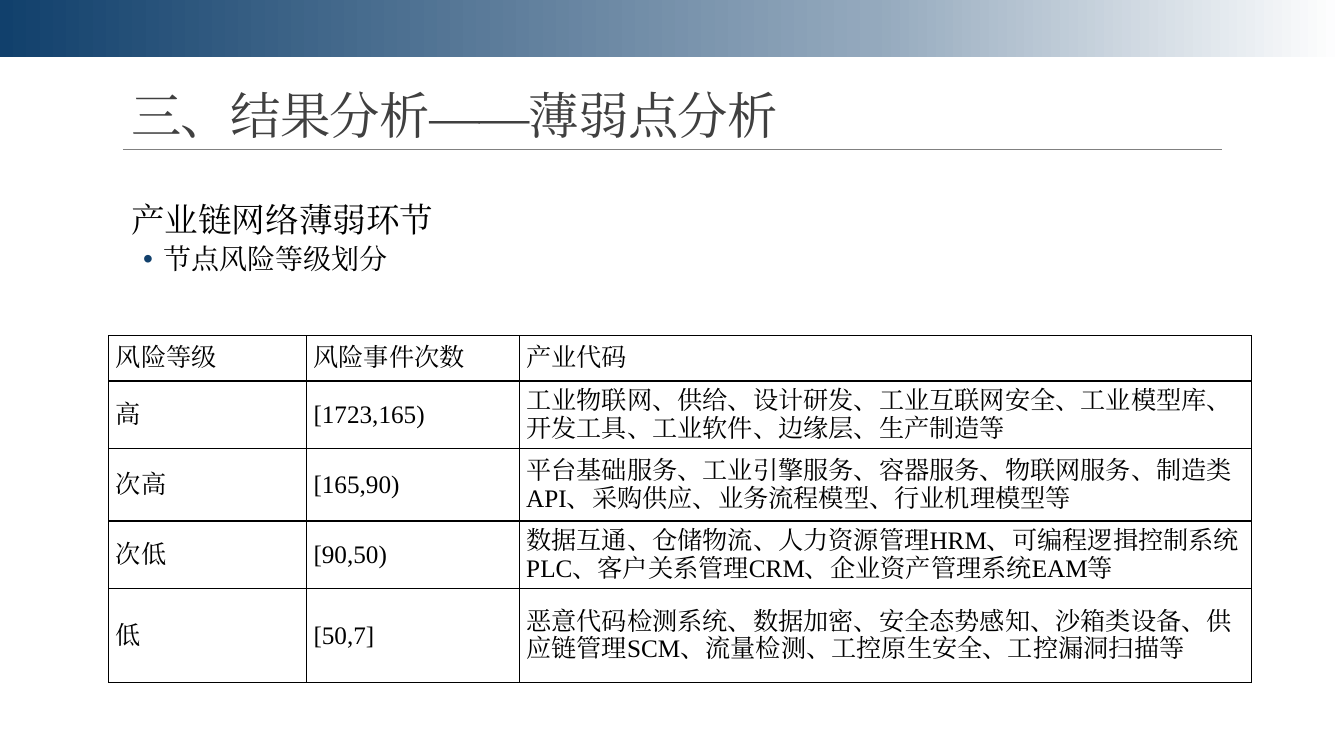
import copy
from dataclasses import dataclass

import pptx
import pptx.dml.color
import pptx.enum.shapes
import pptx.enum.text
import pptx.oxml
import pptx.oxml.ns
import pptx.util

PX = 9144
FONT = "Times New Roman"
BLACK = "000000"
NAVY = "11406C"
NS = pptx.oxml.ns.nsdecls("a")
qn = pptx.oxml.ns.qn


@dataclass(frozen=True)
class Box:
    left: int
    top: int
    width: int
    height: int

    def emu(self) -> list[int]:
        return [px(v) for v in (self.left, self.top, self.width, self.height)]


@dataclass(frozen=True)
class RiskRow:
    height: int
    level: str
    events: str
    industries: str


RISK_ROWS = [
    RiskRow(45, "风险等级", "风险事件次数", "产业代码"),
    RiskRow(67, "高", "[1723,165)",
            "工业物联网、供给、设计研发、工业互联网安全、工业模型库、开发工具、工业软件、边缘层、生产制造等"),
    RiskRow(72, "次高", "[165,90)",
            "平台基础服务、工业引擎服务、容器服务、物联网服务、制造类API、采购供应、业务流程模型、行业机理模型等"),
    RiskRow(67, "次低", "[90,50)",
            "数据互通、仓储物流、人力资源管理HRM、可编程逻揖控制系统PLC、客户关系管理CRM、企业资产管理系统EAM等"),
    RiskRow(93, "低", "[50,7]",
            "恶意代码检测系统、数据加密、安全态势感知、沙箱类设备、供应链管理SCM、流量检测、工控原生安全、工控漏洞扫描等"),
]
COLUMN_WIDTHS = [196, 211, 726]


def px(value: int) -> int:
    return value * PX


def rgb(value: str) -> pptx.dml.color.RGBColor:
    return pptx.dml.color.RGBColor.from_string(value)


def write(paragraph, text: str, *, size: int, color: str = BLACK, line: float = 1.0,
          before: int = 0, after: int = 0, level: int = 0, margin: int = 0,
          hanging: int = 0, bullet: str = "", tracking: int = 0) -> None:
    paragraph.alignment = pptx.enum.text.PP_ALIGN.LEFT
    paragraph.level = level
    paragraph.line_spacing = line
    paragraph.space_before = pptx.util.Pt(before)
    paragraph.space_after = pptx.util.Pt(after)
    properties = paragraph._p.get_or_add_pPr()
    properties.set("marL", str(px(margin)))
    properties.set("indent", str(-px(hanging)))
    if bullet:
        marks = [f'<a:buClr {NS}><a:srgbClr val="{NAVY}"/></a:buClr>',
                 f'<a:buFont {NS} typeface="Arial"/>',
                 f'<a:buChar {NS} char="{bullet}"/>']
    else:
        marks = [f"<a:buNone {NS}/>"]
    for mark in marks:
        properties.append(pptx.oxml.parse_xml(mark))
    run = paragraph.add_run()
    run.text = text
    run.font.size = pptx.util.Pt(size)
    run.font.name = FONT
    run.font.color.rgb = rgb(color)
    run_properties = run._r.get_or_add_rPr()
    if tracking:
        run_properties.set("spc", str(tracking))
    run_properties.find(qn("a:latin")).addnext(
        pptx.oxml.parse_xml(f'<a:ea {NS} typeface="{FONT}"/>'))


def place(placeholder, box: Box, anchor, side_inset: int):
    placeholder.left, placeholder.top, placeholder.width, placeholder.height = box.emu()
    frame = placeholder.text_frame
    frame.auto_size = pptx.enum.text.MSO_AUTO_SIZE.NONE
    frame.word_wrap = True
    frame.vertical_anchor = anchor
    frame.margin_left = frame.margin_right = px(side_inset)
    frame.margin_top = frame.margin_bottom = px(5)
    return frame


def add_band(slide) -> None:
    band = slide.shapes.add_shape(
        pptx.enum.shapes.MSO_SHAPE.RECTANGLE, *Box(0, 0, 1333, 57).emu())
    band.shadow.inherit = False
    band.line.fill.background()
    band.fill.gradient()
    band.fill.gradient_angle = 0
    first_stop = band._element.spPr.find(".//" + qn("a:gs"))
    first_stop.addnext(copy.deepcopy(first_stop))
    colors = [(0, NAVY), (0.65, "94A9BD"), (1, "FFFFFF")]
    for stop, (position, color) in zip(band.fill.gradient_stops, colors):
        stop.position = position
        stop.color.rgb = rgb(color)


def add_title_rule(slide) -> None:
    rule = slide.shapes.add_connector(
        pptx.enum.shapes.MSO_CONNECTOR.STRAIGHT, px(122), px(148), px(1212), px(148))
    rule.line.color.rgb = rgb("808080")
    rule.line.width = pptx.util.Pt(0.5)
    rule._element.spPr.append(pptx.oxml.parse_xml(f"<a:effectLst {NS}/>"))


def format_cell(cell, text: str) -> None:
    cell.vertical_anchor = pptx.enum.text.MSO_ANCHOR.MIDDLE
    cell.margin_left = cell.margin_right = px(7)
    cell.margin_top = cell.margin_bottom = 0
    cell.fill.background()
    for index, side in enumerate(("lnL", "lnR", "lnT", "lnB")):
        cell._tc.tcPr.insert(index, pptx.oxml.parse_xml(
            f'<a:{side} {NS} w="12700"><a:solidFill><a:srgbClr val="{BLACK}"/>'
            f"</a:solidFill></a:{side}>"))
    write(cell.text_frame.paragraphs[0], text, size=18)


def add_risk_table(slide) -> None:
    box = Box(108, 333, sum(COLUMN_WIDTHS), sum(row.height for row in RISK_ROWS))
    table = slide.shapes.add_table(len(RISK_ROWS), len(COLUMN_WIDTHS), *box.emu()).table
    table.first_row = table.horz_banding = False
    for column, width in zip(table.columns, COLUMN_WIDTHS):
        column.width = px(width)
    for table_row, risk in zip(table.rows, RISK_ROWS):
        table_row.height = px(risk.height)
        for cell, text in zip(table_row.cells, (risk.level, risk.events, risk.industries)):
            format_cell(cell, text)


def main() -> None:
    deck = pptx.Presentation()
    deck.slide_width, deck.slide_height = px(1333), px(750)
    slide = deck.slides.add_slide(deck.slide_layouts[1])
    add_band(slide)
    add_title_rule(slide)
    anchors = pptx.enum.text.MSO_ANCHOR
    heading = place(slide.shapes.title, Box(120, 58, 1100, 91), anchors.BOTTOM, 10)
    write(heading.paragraphs[0], "三、结果分析——薄弱点分析",
          size=36, color="404040", line=0.85, tracking=-50)
    outline = place(slide.placeholders[1], Box(120, 197, 540, 548), anchors.TOP, 0)
    write(outline.paragraphs[0], "产业链网络薄弱环节",
          size=24, line=0.9, before=12, after=2, margin=10)
    write(outline.add_paragraph(), "节点风险等级划分", size=20, line=0.9,
          before=2, after=4, level=1, margin=42, hanging=20, bullet="•")
    add_risk_table(slide)
    deck.save("out.pptx")


if __name__ == "__main__":
    main()
